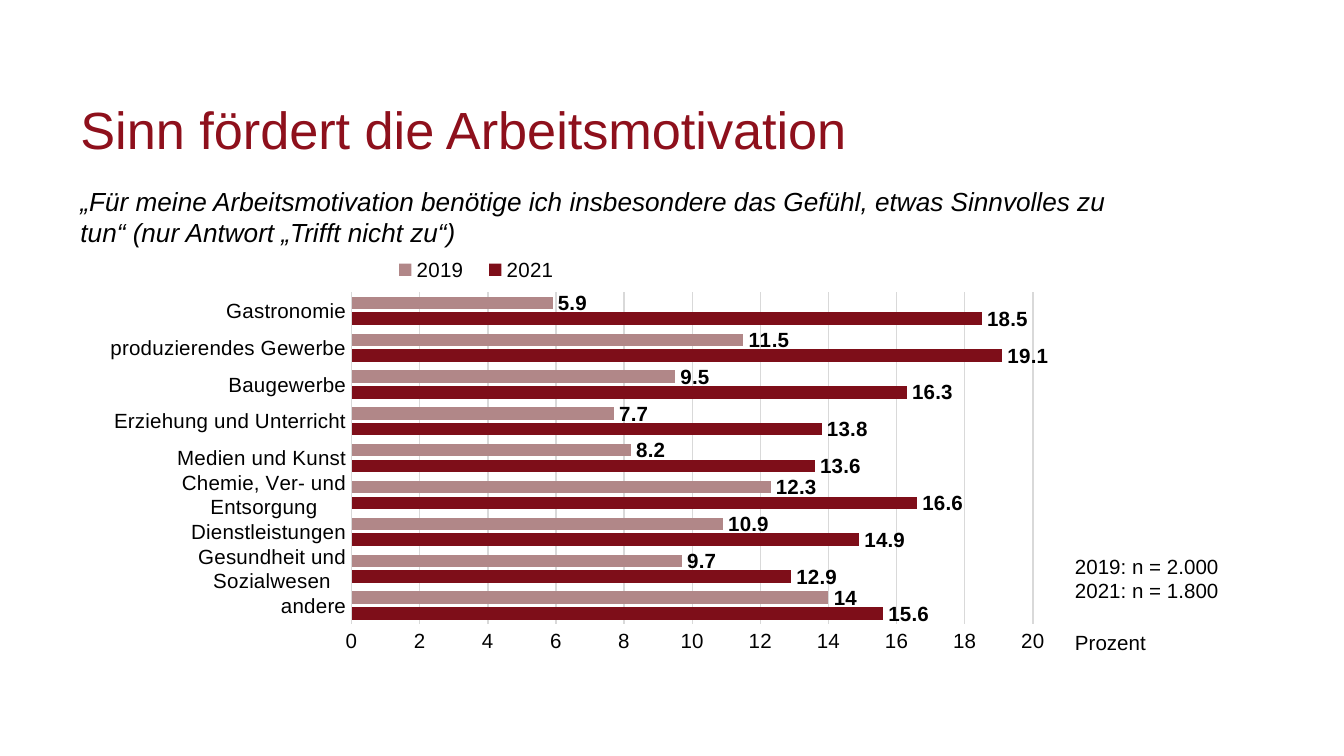
from lxml import etree
from pptx import Presentation
from pptx.chart.data import CategoryChartData
from pptx.dml.color import RGBColor
from pptx.enum.chart import XL_CHART_TYPE, XL_LABEL_POSITION, XL_LEGEND_POSITION, XL_TICK_MARK
from pptx.enum.text import MSO_ANCHOR, MSO_AUTO_SIZE
from pptx.oxml.ns import qn
from pptx.util import Inches, Pt

BLACK = RGBColor(0x00, 0x00, 0x00)
TITLE_RED = RGBColor(0x8E, 0x10, 0x1C)
DARK_RED = RGBColor(0x7E, 0x0E, 0x19)
ROSE = RGBColor(0xB1, 0x87, 0x88)
GRID_GREY = RGBColor(0xD9, 0xD9, 0xD9)

SECTORS = [
    "andere", "Gesundheit und Sozialwesen", "Dienstleistungen",
    "Chemie, Ver- und Entsorgung", "Medien und Kunst", "Erziehung und Unterricht",
    "Baugewerbe", "produzierendes Gewerbe", "Gastronomie",
]
SURVEYS = [
    ("2021", DARK_RED, [15.6, 12.9, 14.9, 16.6, 13.6, 13.8, 16.3, 19.1, 18.5]),
    ("2019", ROSE, [14, 9.7, 10.9, 12.3, 8.2, 7.7, 9.5, 11.5, 5.9]),
]


class SlideBuilder:
    """Draws text and bar charts on one slide in a shared style."""

    def __init__(self, slide, font_name="Arial", small=11):
        self.slide = slide
        self.font_name = font_name
        self.small = small

    def style(self, font, size=None, color=BLACK, bold=False, italic=False):
        font.name = self.font_name
        font.size = Pt(size or self.small)
        font.bold = bold
        font.italic = italic
        font.color.rgb = color

    def text(self, box, lines, wrap=True, grow=True, anchor=MSO_ANCHOR.TOP, **look):
        frame = self.slide.shapes.add_textbox(*map(Inches, box)).text_frame
        frame.word_wrap = wrap
        frame.auto_size = MSO_AUTO_SIZE.SHAPE_TO_FIT_TEXT if grow else MSO_AUTO_SIZE.NONE
        frame.vertical_anchor = anchor
        frame.text = "\n".join(lines)
        for paragraph in frame.paragraphs:
            self.style(paragraph.font, **look)

    def place(self, element, x, y, w, h, inner=False):
        for old in element.findall(qn("c:layout")):
            element.remove(old)
        layout = etree.Element(qn("c:layout"))
        manual = etree.SubElement(layout, qn("c:manualLayout"))
        settings = [("layoutTarget", "inner")] if inner else []
        settings += [("xMode", "edge"), ("yMode", "edge")]
        settings += [("x", x), ("y", y), ("w", w), ("h", h)]
        for tag, value in settings:
            etree.SubElement(manual, qn(f"c:{tag}")).set("val", str(value))
        position = element.find(qn("c:legendPos"))
        if position is None:
            element.insert(0, layout)
        else:
            position.addnext(layout)

    def axis(self, axis):
        axis.major_tick_mark = axis.minor_tick_mark = XL_TICK_MARK.NONE
        self.style(axis.tick_labels.font)

    def grey_line(self, line):
        line.color.rgb = GRID_GREY
        line.width = Pt(0.75)

    def bar_chart(self, box, categories, surveys, plot_area, legend_area):
        data = CategoryChartData()
        data.categories = categories
        for year, _, shares in surveys:
            data.add_series(year, shares)
        chart = self.slide.shapes.add_chart(
            XL_CHART_TYPE.BAR_CLUSTERED, *map(Inches, box), data).chart
        chart.has_title = False
        self.style(chart.font, size=10)

        plot = chart.plots[0]
        plot.gap_width = 70
        plot.overlap = -27
        plot.vary_by_categories = False
        for series, (_, color, _) in zip(plot.series, surveys):
            series.format.fill.solid()
            series.format.fill.fore_color.rgb = color
            labels = series.data_labels
            labels.show_value = True
            labels.position = XL_LABEL_POSITION.OUTSIDE_END
            self.style(labels.font, bold=True)

        self.axis(chart.category_axis)
        self.grey_line(chart.category_axis.format.line)
        percent = chart.value_axis
        self.axis(percent)
        percent.minimum_scale, percent.maximum_scale, percent.major_unit = 0, 20, 2
        percent.format.line.fill.background()
        self.grey_line(percent.major_gridlines.format.line)

        chart.has_legend = True
        legend = chart.legend
        legend.position = XL_LEGEND_POSITION.BOTTOM
        legend.include_in_layout = False
        self.style(legend.font)
        chart_area = chart.element.find(qn("c:chart"))
        self.place(chart_area.find(qn("c:plotArea")), *plot_area, inner=True)
        self.place(chart_area.find(qn("c:legend")), *legend_area)


def main():
    deck = Presentation()
    deck.slide_width = Inches(10)
    deck.slide_height = deck.slide_width * 9 // 16
    builder = SlideBuilder(deck.slides.add_slide(deck.slide_layouts[6]))

    builder.text((0.5, 0.66, 6.68, 0.6), ["Sinn fördert die Arbeitsmotivation"],
                 grow=False, anchor=MSO_ANCHOR.MIDDLE, size=28, color=TITLE_RED)
    builder.text((0.5, 1.33, 8.21, 0.57),
                 ["„Für meine Arbeitsmotivation benötige ich insbesondere das Gefühl, "
                  "etwas Sinnvolles zu tun“ (nur Antwort „Trifft nicht zu“)"],
                 size=14, italic=True)
    builder.bar_chart((0.76, 1.81, 7.14, 3.05), SECTORS, SURVEYS,
                      plot_area=(0.26, 0.12, 0.71, 0.81),
                      legend_area=(0.29, 0.02, 0.2, 0.09))
    builder.text((7.9, 4.64, 1.11, 0.29), ["Prozent"])
    builder.text((7.9, 4.07, 1.27, 0.47), ["2019: n = 2.000", "2021: n = 1.800"], wrap=False)

    deck.save("out.pptx")


if __name__ == "__main__":
    main()
